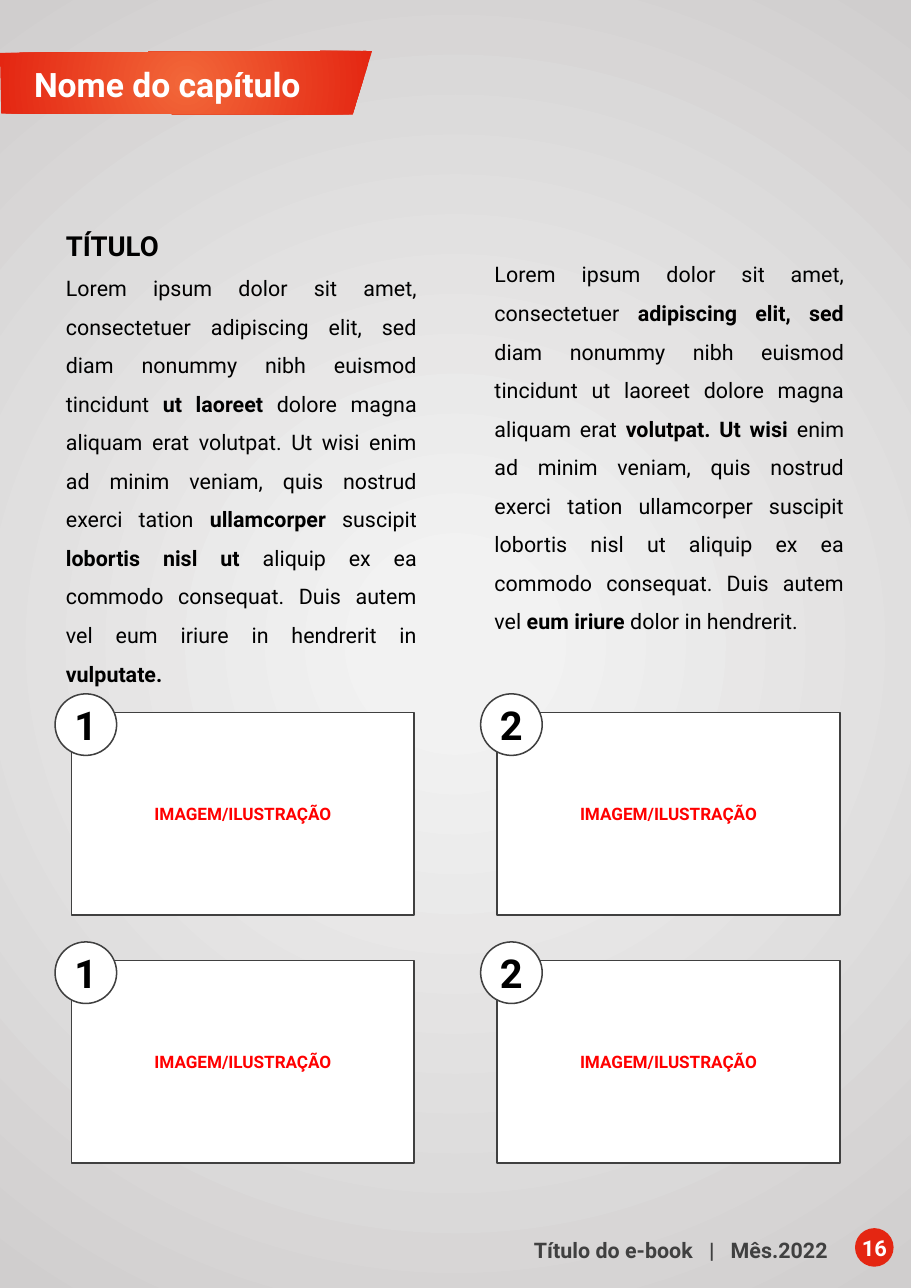
"""Build an e-book chapter page with two text columns and a grid of illustration frames."""
from itertools import product

from lxml.etree import SubElement
from pptx import Presentation
from pptx.dml.color import RGBColor
from pptx.enum.shapes import MSO_SHAPE
from pptx.enum.text import MSO_ANCHOR, MSO_AUTO_SIZE, PP_ALIGN
from pptx.oxml.ns import qn
from pptx.util import Cm, Pt

FONT = "Roboto"
COLORS = {
    "paper_center": "F2F2F2", "paper_edge": "D0CECE",
    "banner_center": "F26739", "banner_edge": "E42612",
    "white": "FFFFFF", "black": "000000", "gray": "404040", "label": "FF0000",
}
PAGE = (21, 29.7)
CHAPTER = "Nome do capítulo"
HEADING = "TÍTULO"
LEFT_BODY = [
    "Lorem ipsum dolor sit amet, consectetuer adipiscing elit, sed diam nonummy nibh euismod tincidunt ",
    "ut laoreet ",
    "dolore magna aliquam erat volutpat. Ut wisi enim ad minim veniam, quis nostrud exerci tation ",
    "ullamcorper ",
    "suscipit ",
    "lobortis nisl ut ",
    "aliquip ex ea commodo consequat. Duis autem vel eum iriure in hendrerit in ",
    "vulputate.",
]
RIGHT_BODY = [
    "Lorem ipsum dolor sit amet, consectetuer ",
    "adipiscing elit, sed ",
    "diam nonummy nibh euismod tincidunt ut laoreet dolore magna aliquam erat ",
    "volutpat. Ut wisi ",
    "enim ad minim veniam, quis nostrud exerci tation ullamcorper suscipit lobortis nisl ut "
    "aliquip ex ea commodo consequat. Duis autem vel ",
    "eum iriure ",
    "dolor in hendrerit.",
]
FRAME_LABEL = "IMAGEM/ILUSTRAÇÃO"
FRAME_NUMBERS = ["1", "2"]
FRAME_ROWS = 2
FOOTER = ["Título do e-book", " ", "|", " ", "Mês.2022"]
PAGE_NUMBER = "16"

BANNER = [(0, 1.22), (8.58, 1.17), (8.13, 2.64), (0.03, 2.62)]
FRAME_ORIGIN, FRAME_STEP, FRAME_SIZE = (1.65, 16.43), (9.81, 5.72), (7.9, 4.67)
BADGE_OFFSET, BADGE_SIZE = (-0.38, -0.43), 1.42


def rgb(color):
    return RGBColor.from_string(COLORS[color])


def style(run, size, color, bold=True):
    run.font.name = FONT
    run.font.size = Pt(size)
    run.font.bold = bold
    run.font.color.rgb = rgb(color)


def fill_radial(shape, center, edge, start=0):
    shape.shadow.inherit = False
    shape.line.fill.background()
    shape.fill.gradient()
    for stop, color, position in zip(shape.fill.gradient_stops, (center, edge), (start, 1)):
        stop.color.rgb = rgb(color)
        stop.position = position
    gradient = shape._element.spPr.find(qn("a:gradFill"))
    gradient.remove(gradient.find(qn("a:lin")))
    circle = SubElement(gradient, qn("a:path"), path="circle")
    SubElement(circle, qn("a:fillToRect"), l="50000", t="50000", r="50000", b="50000")


def add_labelled(slide, preset, box, text, size, color, fill="white", outline="gray"):
    shape = slide.shapes.add_shape(preset, *map(Cm, box))
    shape.shadow.inherit = False
    shape.fill.solid()
    shape.fill.fore_color.rgb = rgb(fill)
    if outline:
        shape.line.color.rgb = rgb(outline)
        shape.line.width = Pt(1)
    else:
        shape.line.fill.background()
    frame = shape.text_frame
    frame.margin_left = frame.margin_right = frame.margin_top = frame.margin_bottom = 0
    frame.word_wrap = False
    frame.vertical_anchor = MSO_ANCHOR.MIDDLE
    frame.text = text
    frame.paragraphs[0].alignment = PP_ALIGN.CENTER
    style(frame.paragraphs[0].runs[0], size, color)


def add_text(slide, box):
    frame = slide.shapes.add_textbox(*map(Cm, box)).text_frame
    frame.word_wrap = True
    return frame


def write_body(paragraph, parts):
    paragraph.alignment = PP_ALIGN.JUSTIFY
    paragraph.line_spacing = 1.5
    for index, part in enumerate(parts):
        run = paragraph.add_run()
        run.text = part
        style(run, 14, "black", bold=index % 2 == 1)


def add_chapter(slide):
    builder = slide.shapes.build_freeform(*map(Cm, BANNER[0]))
    builder.add_line_segments([(Cm(x), Cm(y)) for x, y in BANNER[1:]])
    banner = builder.convert_to_shape()
    fill_radial(banner, "banner_center", "banner_edge")
    title = slide.shapes.title
    title.left, title.top, title.width, title.height = map(Cm, (0.53, 1.35, 6.81, 1.19))
    frame = title.text_frame
    frame.text = CHAPTER
    frame.auto_size = MSO_AUTO_SIZE.NONE
    frame.vertical_anchor = MSO_ANCHOR.TOP
    frame.paragraphs[0].alignment = PP_ALIGN.LEFT
    style(frame.paragraphs[0].runs[0], 22, "white")
    banner._element.addnext(title._element)


def add_columns(slide):
    left = add_text(slide, (1.27, 4.78, 8.59, 11.2))
    heading = left.paragraphs[0]
    heading.text = HEADING
    heading.line_spacing = 1.5
    heading.alignment = PP_ALIGN.JUSTIFY
    style(heading.runs[0], 18, "black")
    write_body(left.add_paragraph(), LEFT_BODY)
    right = add_text(slide, (11.15, 5.61, 8.56, 9.14))
    write_body(right.paragraphs[0], RIGHT_BODY)


def add_frames(slide):
    for row, (column, number) in product(range(FRAME_ROWS), enumerate(FRAME_NUMBERS)):
        x = FRAME_ORIGIN[0] + column * FRAME_STEP[0]
        y = FRAME_ORIGIN[1] + row * FRAME_STEP[1]
        add_labelled(slide, MSO_SHAPE.RECTANGLE, (x, y, *FRAME_SIZE), FRAME_LABEL, 11.2, "label")
        badge = (x + BADGE_OFFSET[0], y + BADGE_OFFSET[1], BADGE_SIZE, BADGE_SIZE)
        add_labelled(slide, MSO_SHAPE.OVAL, badge, number, 26, "black")


def add_footer(slide):
    footer = add_text(slide, (9.22, 28.4, 10.11, 0.86)).paragraphs[0]
    footer.alignment = PP_ALIGN.RIGHT
    for part in FOOTER:
        run = footer.add_run()
        run.text = part
        style(run, 14, "gray")
        if part == " ":
            run.font._element.set("spc", "700")
    add_labelled(slide, MSO_SHAPE.OVAL, (19.71, 28.32, 0.89, 0.89), PAGE_NUMBER, 14.3,
                 "white", fill="banner_edge", outline=None)


def main():
    deck = Presentation()
    deck.slide_width, deck.slide_height = map(Cm, PAGE)
    slide = deck.slides.add_slide(deck.slide_layouts[5])
    paper = slide.shapes.add_shape(MSO_SHAPE.RECTANGLE, 0, 0, *map(Cm, PAGE))
    fill_radial(paper, "paper_center", "paper_edge", start=0.09)
    add_chapter(slide)
    add_columns(slide)
    add_frames(slide)
    add_footer(slide)
    deck.save("out.pptx")


if __name__ == "__main__":
    main()
